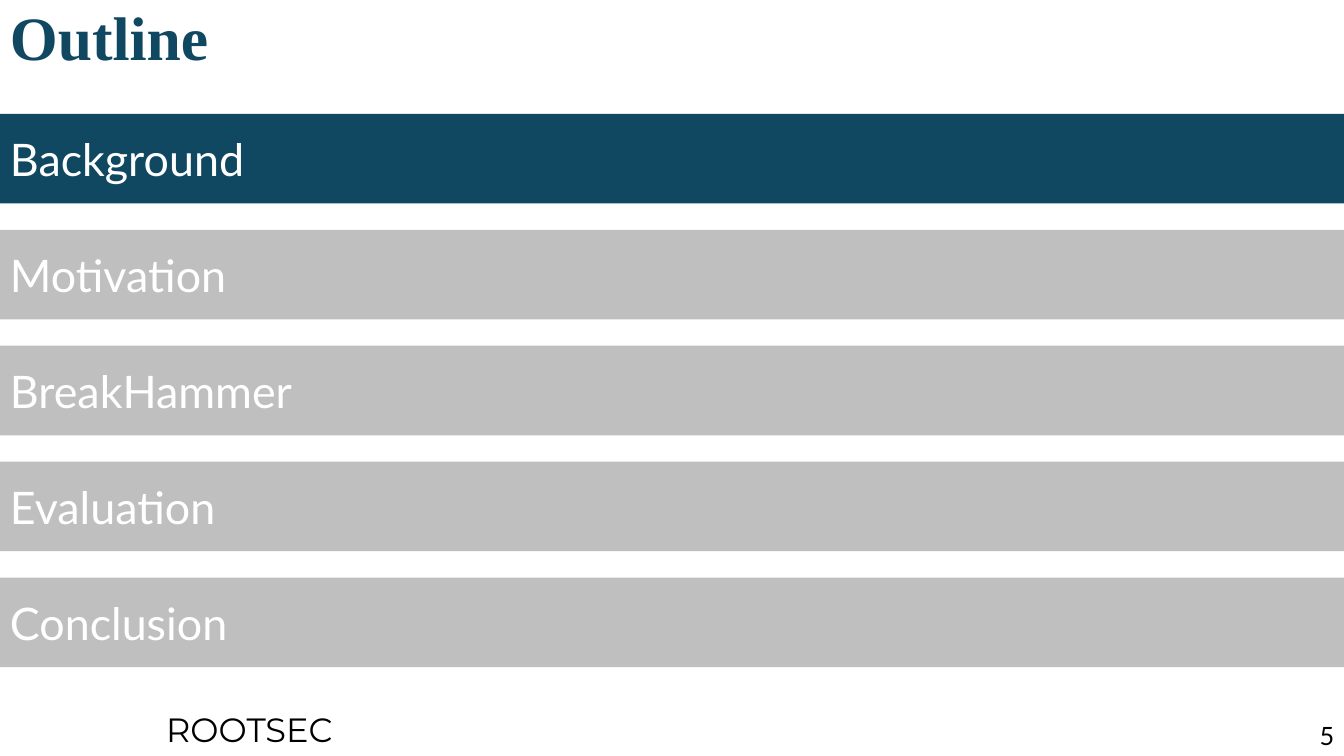
from pptx import Presentation
from pptx.dml.color import RGBColor
from pptx.enum.shapes import MSO_SHAPE
from pptx.enum.text import MSO_ANCHOR, MSO_AUTO_SIZE, PP_ALIGN
from pptx.util import Pt

NAVY = RGBColor(0x10, 0x48, 0x62)
GREY = RGBColor(0xBF, 0xBF, 0xBF)
WHITE = RGBColor(0xFF, 0xFF, 0xFF)
BLACK = RGBColor(0x00, 0x00, 0x00)

SLIDE_WIDTH, SLIDE_HEIGHT = 960, 540
BAR_TOP, BAR_HEIGHT, BAR_STEP = 81.36, 64, 82.8
SECTIONS = ("Background", "Motivation", "BreakHammer", "Evaluation", "Conclusion")
CURRENT_SECTION = "Background"


class OutlinePage:
    """Draws the title, section bars and footer of an outline slide."""

    body_font = "Lato"
    title_font = "Times New Roman"
    footer_font = "Montserrat"

    def __init__(self, deck):
        self.page = deck.slides.add_slide(deck.slide_layouts[6])

    def set_text(self, box, text, font, size, color, align=PP_ALIGN.LEFT):
        paragraph = box.text_frame.paragraphs[0]
        paragraph.text = text
        paragraph.alignment = align
        paragraph.font.name = font
        paragraph.font.size = Pt(size)
        paragraph.font.color.rgb = color
        return paragraph

    def text_box(self, left, top, width, height, wrap=True):
        box = self.page.shapes.add_textbox(Pt(left), Pt(top), Pt(width), Pt(height))
        box.text_frame.word_wrap = wrap
        return box

    def title(self, text):
        box = self.text_box(0, 0, SLIDE_WIDTH, 57.6)
        box.text_frame.vertical_anchor = MSO_ANCHOR.MIDDLE
        paragraph = self.set_text(box, text, self.title_font, 44, NAVY)
        paragraph.font.bold = True
        paragraph.line_spacing = 0.9

    def section_bar(self, text, top, fill):
        bar = self.page.shapes.add_shape(
            MSO_SHAPE.RECTANGLE, Pt(0), Pt(top), Pt(SLIDE_WIDTH), Pt(BAR_HEIGHT)
        )
        bar.shadow.inherit = False
        bar.fill.solid()
        bar.fill.fore_color.rgb = fill
        bar.line.fill.background()
        bar.text_frame.word_wrap = True
        bar.text_frame.vertical_anchor = MSO_ANCHOR.MIDDLE
        self.set_text(bar, text, self.body_font, 32, WHITE)

    def group_name(self, text):
        box = self.text_box(111.6, 502.56, 137.5, 36, wrap=False)
        box.text_frame.auto_size = MSO_AUTO_SIZE.SHAPE_TO_FIT_TEXT
        self.set_text(box, text, self.footer_font, 24, BLACK)

    def page_number(self, text):
        box = self.text_box(906, 511.2, 54, 28.8)
        box.text_frame.auto_size = MSO_AUTO_SIZE.SHAPE_TO_FIT_TEXT
        self.set_text(box, text, self.body_font, 18, BLACK, PP_ALIGN.RIGHT)


def main():
    deck = Presentation()
    deck.slide_width, deck.slide_height = Pt(SLIDE_WIDTH), Pt(SLIDE_HEIGHT)
    outline = OutlinePage(deck)
    outline.page_number("5")
    outline.group_name("ROOTSEC")
    outline.title("Outline")
    for index, section in enumerate(SECTIONS):
        fill = NAVY if section == CURRENT_SECTION else GREY
        outline.section_bar(section, BAR_TOP + index * BAR_STEP, fill)
    deck.save("out.pptx")


if __name__ == "__main__":
    main()
